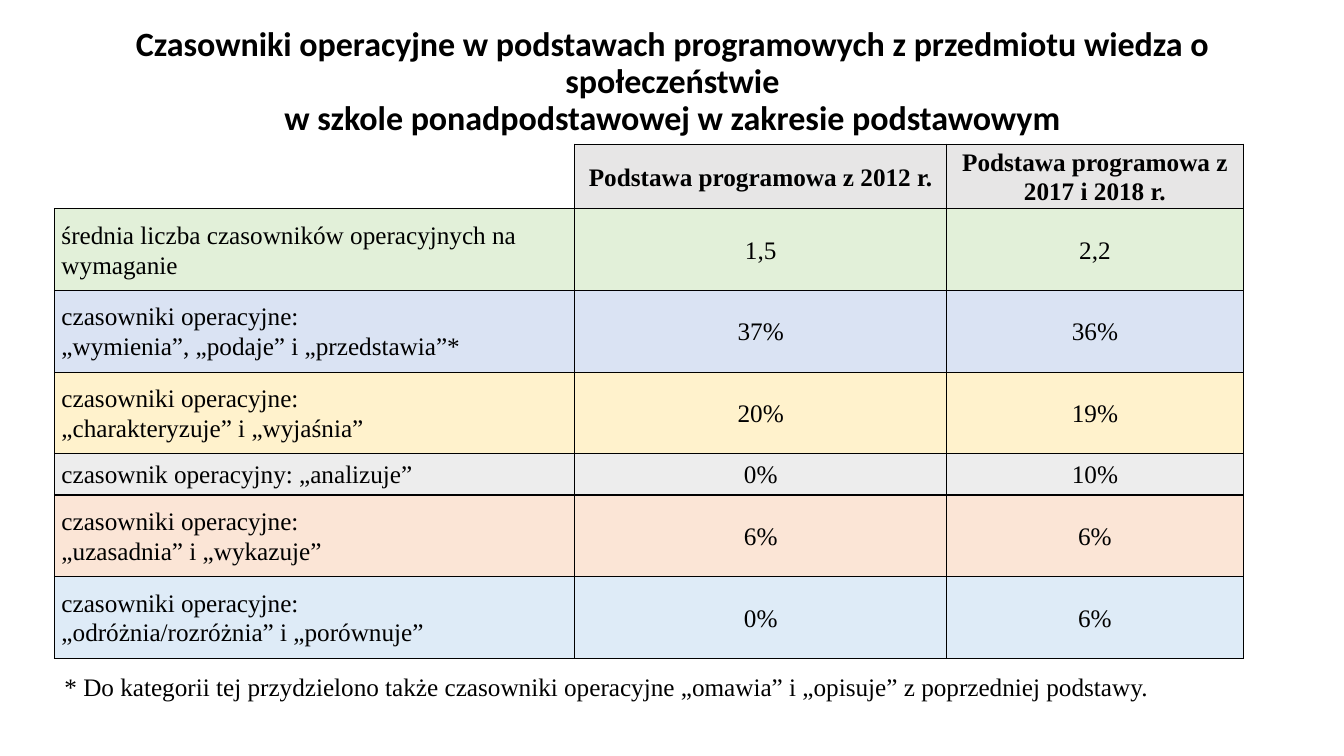
from lxml.etree import SubElement
from pptx import Presentation
from pptx.dml.color import RGBColor
from pptx.enum.text import MSO_ANCHOR as Anchor, PP_ALIGN as Align
from pptx.oxml.ns import qn
from pptx.util import Inches, Pt

SERIF = "Times New Roman"
BLACK = "000000"
COLUMNS = [5.16, 3.69, 2.94]
LINE_ROW, TALL_ROW, HEADER_ROW = 0.41, 0.81, 0.6

TITLE = ("Czasowniki operacyjne w podstawach programowych z przedmiotu wiedza o społeczeństwie"
         "\vw szkole ponadpodstawowej w\u00a0zakresie podstawowym")
FOOTNOTE = ("* Do kategorii tej przydzielono także czasowniki operacyjne "
            "„omawia” i „opisuje” z poprzedniej podstawy.")
VERBS = "czasowniki operacyjne:\n"
# Row height, fill, then the text of the three cells
ROWS = [
    (HEADER_ROW, "E7E6E6", "", "Podstawa programowa z 2012 r.",
     "Podstawa programowa z 2017 i 2018 r."),
    (TALL_ROW, "E2F0D9", "średnia liczba czasowników operacyjnych na wymaganie", "1,5", "2,2"),
    (TALL_ROW, "DAE3F3", VERBS + "„wymienia”, „podaje” i\u00a0„przedstawia”*", "37%", "36%"),
    (TALL_ROW, "FFF2CC", VERBS + "„charakteryzuje” i „wyjaśnia”", "20%", "19%"),
    (LINE_ROW, "EDEDED", "czasownik operacyjny: „analizuje”", "0%", "10%"),
    (TALL_ROW, "FBE5D6", VERBS + "„uzasadnia” i\u00a0„wykazuje”", "6%", "6%"),
    (TALL_ROW, "DEEBF7", VERBS + "„odróżnia/rozróżnia” i „porównuje”", "0%", "6%"),
]


def color(hex_value):
    return RGBColor.from_string(hex_value)


def write(frame, text, font, size, bold=False, align=Align.LEFT, spacing=1.0):
    frame.text = text
    for paragraph in frame.paragraphs:
        paragraph.alignment = align
        paragraph.line_spacing = spacing
        for run in paragraph.runs:
            run.font.name, run.font.size, run.font.bold = font, Pt(size), bold
            run.font.color.rgb = color(BLACK)


def add_text(slide, box, anchor, text, *style, **layout):
    frame = slide.shapes.add_textbox(*map(Inches, box)).text_frame
    frame.word_wrap = True
    frame.vertical_anchor = anchor
    write(frame, text, *style, **layout)
    return frame


def draw_borders(cell, sides):
    properties = cell._tc.get_or_add_tcPr()
    for side in sides:
        line = SubElement(properties, qn(f"a:ln{side}"), w=str(Pt(1)))
        fill = SubElement(line, qn("a:solidFill"))
        SubElement(fill, qn("a:srgbClr"), val=BLACK)


def fill_cell(cell, text, shade, is_header, is_label):
    cell.margin_left = cell.margin_right = Inches(0.07)
    cell.margin_top = cell.margin_bottom = 0
    cell.vertical_anchor = Anchor.MIDDLE
    write(cell.text_frame, text, SERIF, 18, is_header,
          Align.LEFT if is_label else Align.CENTER, 1.07)
    is_corner = is_header and is_label
    draw_borders(cell, "RB" if is_corner else "LRTB")
    if is_corner:
        cell.fill.background()
    else:
        cell.fill.solid()
        cell.fill.fore_color.rgb = color(shade)


def add_comparison(slide, left, top):
    heights = [row[0] for row in ROWS]
    size = (sum(COLUMNS), sum(heights))
    table = slide.shapes.add_table(len(ROWS), len(COLUMNS),
                                   *map(Inches, (left, top, *size))).table
    table.first_row = table.horz_banding = False
    for column, width in zip(table.columns, COLUMNS):
        column.width = Inches(width)
    for r, (height, shade, *texts) in enumerate(ROWS):
        table.rows[r].height = Inches(height)
        for c, text in enumerate(texts):
            fill_cell(table.cell(r, c), text, shade, r == 0, c == 0)


def main():
    deck = Presentation()
    deck.slide_width, deck.slide_height = Inches(13.33), Inches(7.5)
    slide = deck.slides.add_slide(deck.slide_layouts[6])

    # Heading
    add_text(slide, (0.92, 0.27, 11.5, 1.1), Anchor.MIDDLE, TITLE,
             "Calibri", 24.3, True, align=Align.CENTER, spacing=0.9)
    # Comparison of the two curricula
    add_comparison(slide, 0.54, 1.43)
    # Footnote
    add_text(slide, (0.54, 6.61, 11.32, 0.4), Anchor.TOP, FOOTNOTE, SERIF, 18)

    deck.save("out.pptx")


if __name__ == "__main__":
    main()
